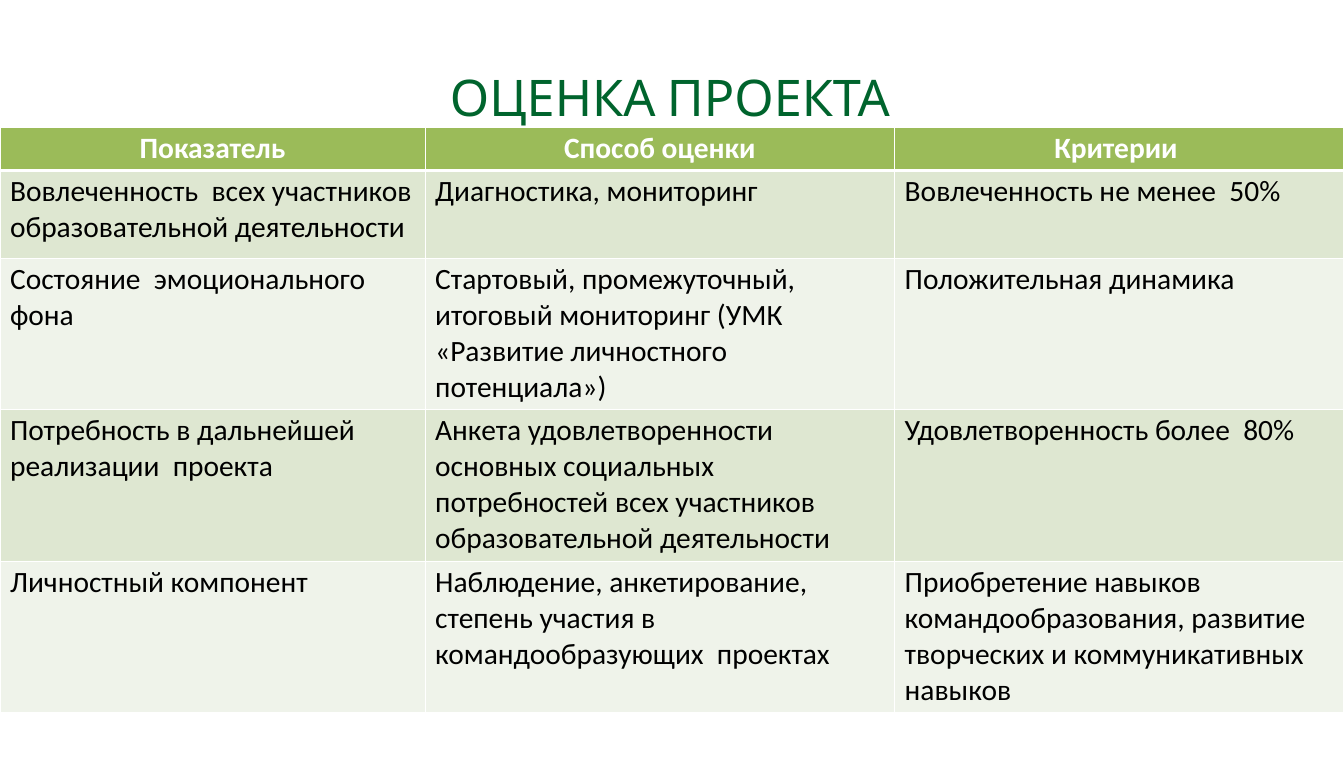
from lxml import etree
from pptx import Presentation
from pptx.dml.color import RGBColor
from pptx.enum.text import MSO_ANCHOR, PP_ALIGN
from pptx.oxml.ns import qn
from pptx.util import Inches, Pt

CENTER, LEFT = PP_ALIGN.CENTER, PP_ALIGN.LEFT
MIDDLE = MSO_ANCHOR.MIDDLE

WHITE, BLACK = "FFFFFF", "000000"
TITLE_GREEN, HEADER_GREEN = "00642D", "9BBB59"
BAND_FILLS = ("DEE7D1", "EFF3EA")

COLUMN_WIDTHS = (4.21, 4.65, 4.45)
ROW_HEIGHTS = (0.43, 0.87, 1.5, 1.5, 1.5)
ASSESSMENT = (
    ("Показатель", "Способ оценки", "Критерии "),
    ("Вовлеченность  всех участников образовательной деятельности",
     "Диагностика, мониторинг",
     "Вовлеченность не менее  50%"),
    ("Состояние  эмоционального фона",
     "Стартовый, промежуточный, итоговый мониторинг "
     "(УМК «Развитие личностного потенциала»)",
     "Положительная динамика"),
    ("Потребность в дальнейшей реализации  проекта",
     "Анкета удовлетворенности основных социальных потребностей "
     "всех участников образовательной деятельности",
     "Удовлетворенность более  80%"),
    ("Личностный компонент",
     "Наблюдение, анкетирование, степень участия в "
     "командообразующих  проектах",
     "Приобретение навыков командообразования, развитие творческих "
     "и коммуникативных навыков"),
)

TITLE_FONT = {"name": "Cabin", "size": Pt(36), "bold": False}
HEADER_FONT = {"name": "Calibri", "size": Pt(21), "bold": True}
BODY_FONT = {**HEADER_FONT, "bold": False}
TITLE_FRAME = {"word_wrap": True, "vertical_anchor": MIDDLE, "margin_left": 0,
               "margin_right": 0, "margin_top": 0, "margin_bottom": 0}
CELL_MARGINS = {"margin_left": Inches(0.1), "margin_right": Inches(0.1),
                "margin_top": Inches(0.03), "margin_bottom": Inches(0.03)}


def color(value):
    return RGBColor.from_string(value)


def apply_format(target, values):
    for name, value in values.items():
        setattr(target, name, value)


def write_text(paragraph, text, font, font_color, alignment):
    paragraph.text = text
    paragraph.alignment = alignment
    apply_format(paragraph.font, font)
    paragraph.font.color.rgb = color(font_color)


def add_title(slide, text):
    box = slide.shapes.add_textbox(
        Inches(-0.02), Inches(0.72), Inches(13.31), Inches(0.55))
    apply_format(box.text_frame, TITLE_FRAME)
    paragraph = box.text_frame.paragraphs[0]
    write_text(paragraph, text, TITLE_FONT, TITLE_GREEN, CENTER)
    paragraph.line_spacing = 0.9


def set_borders(cell, widths):
    """Draw white cell borders; the lines must precede the fill."""
    properties = cell._tc.get_or_add_tcPr()
    for position, (side, width) in enumerate(widths.items()):
        line = etree.Element(qn(f"a:ln{side}"), w=str(Pt(width)))
        fill = etree.SubElement(line, qn("a:solidFill"))
        etree.SubElement(fill, qn("a:srgbClr"), val=WHITE)
        properties.insert(position, line)


def fill_cell(cell, text, row_index):
    is_header = row_index == 0
    apply_format(cell, CELL_MARGINS)
    cell.fill.solid()
    fill = HEADER_GREEN if is_header else BAND_FILLS[(row_index - 1) % 2]
    cell.fill.fore_color.rgb = color(fill)
    set_borders(cell, {"L": 1, "R": 1, "T": 3 if row_index == 1 else 1,
                       "B": 3 if is_header else 1})
    paragraph = cell.text_frame.paragraphs[0]
    if is_header:
        write_text(paragraph, text, HEADER_FONT, WHITE, CENTER)
    else:
        write_text(paragraph, text, BODY_FONT, BLACK, LEFT)


def add_assessment_table(slide):
    table = slide.shapes.add_table(
        len(ROW_HEIGHTS), len(COLUMN_WIDTHS), Inches(0), Inches(1.26),
        Inches(sum(COLUMN_WIDTHS)), Inches(sum(ROW_HEIGHTS))).table
    for column, width in zip(table.columns, COLUMN_WIDTHS):
        column.width = Inches(width)
    for row_index, (row, height) in enumerate(zip(table.rows, ROW_HEIGHTS)):
        row.height = Inches(height)
        for cell, text in zip(row.cells, ASSESSMENT[row_index]):
            fill_cell(cell, text, row_index)


def main():
    presentation = Presentation()
    presentation.slide_width = Inches(13.31)
    presentation.slide_height = Inches(7.5)
    slide = presentation.slides.add_slide(presentation.slide_layouts[6])

    # Heading
    add_title(slide, "ОЦЕНКА ПРОЕКТА")

    # Indicators, methods and criteria
    add_assessment_table(slide)

    presentation.save("out.pptx")


if __name__ == "__main__":
    main()
